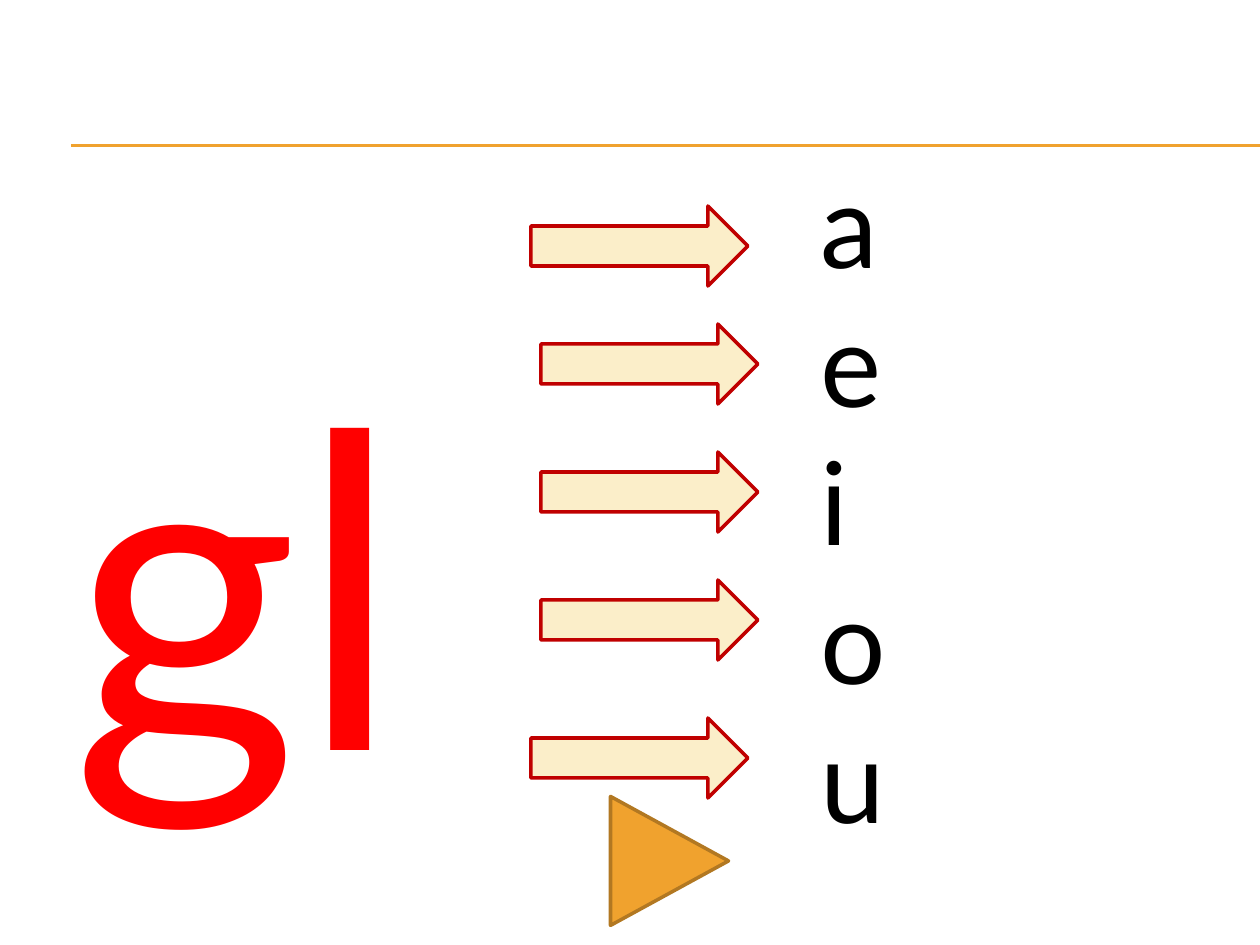
from lxml import etree
from pptx import Presentation
from pptx.dml.color import RGBColor
from pptx.enum.shapes import MSO_CONNECTOR, MSO_SHAPE
from pptx.enum.text import MSO_AUTO_SIZE
from pptx.oxml.ns import qn
from pptx.util import Pt

ARROW = MSO_SHAPE.RIGHT_ARROW
TRIANGLE = MSO_SHAPE.ISOSCELES_TRIANGLE
STRAIGHT = MSO_CONNECTOR.STRAIGHT
FIT = MSO_AUTO_SIZE.SHAPE_TO_FIT_TEXT
FIXED = MSO_AUTO_SIZE.NONE
BLANK = 6
AMBER = "F0A22E"


def px(n):
    return round(n * 914400 / 126)


def color(code):
    return RGBColor.from_string(code)


def add_rule(slide, y):
    rule = slide.shapes.add_connector(STRAIGHT, px(71), px(y), px(1260), px(y))
    rule.line.color.rgb = color(AMBER)
    rule.line.width = Pt(0.75)
    etree.SubElement(rule.element.spPr, qn("a:effectLst"))


def add_solid(slide, kind, box, fill, edge, turn=0):
    shape = slide.shapes.add_shape(kind, *map(px, box))
    shape.shadow.inherit = False
    shape.rotation = turn
    shape.fill.solid()
    shape.fill.fore_color.rgb = color(fill)
    shape.line.color.rgb = color(edge)
    shape.line.width = Pt(2)


def add_text(slide, box, lines, size, ink, **form):
    frame = slide.shapes.add_textbox(*map(px, box)).text_frame
    for name, value in form.items():
        setattr(frame, name, value)
    frame.text = "\n".join(lines)
    for para in frame.paragraphs:
        font = para.runs[0].font
        font.name = "Lato"
        font.size = Pt(size)
        font.color.rgb = color(ink)


def main():
    deck = Presentation()
    deck.slide_width, deck.slide_height = px(1260), px(945)
    slide = deck.slides.add_slide(deck.slide_layouts[BLANK])

    for y in (145, 146):
        add_rule(slide, y)
    add_text(slide, (59, 147, 440, 650), ["gl"], 250, "FF0000",
             word_wrap=True, auto_size=FIXED, margin_top=px(166))
    for x, y in ((531, 206), (541, 324), (541, 452), (541, 580), (531, 718)):
        add_solid(slide, ARROW, (x, y, 217, 80), "FBEEC9", "C00000")
    add_text(slide, (808, 147, 237, 712), "aeiou", 66, "000000",
             word_wrap=True, auto_size=FIT)
    add_solid(slide, TRIANGLE, (605, 802, 129, 118), AMBER, "B27822", 90)

    deck.save("out.pptx")


if __name__ == "__main__":
    main()
